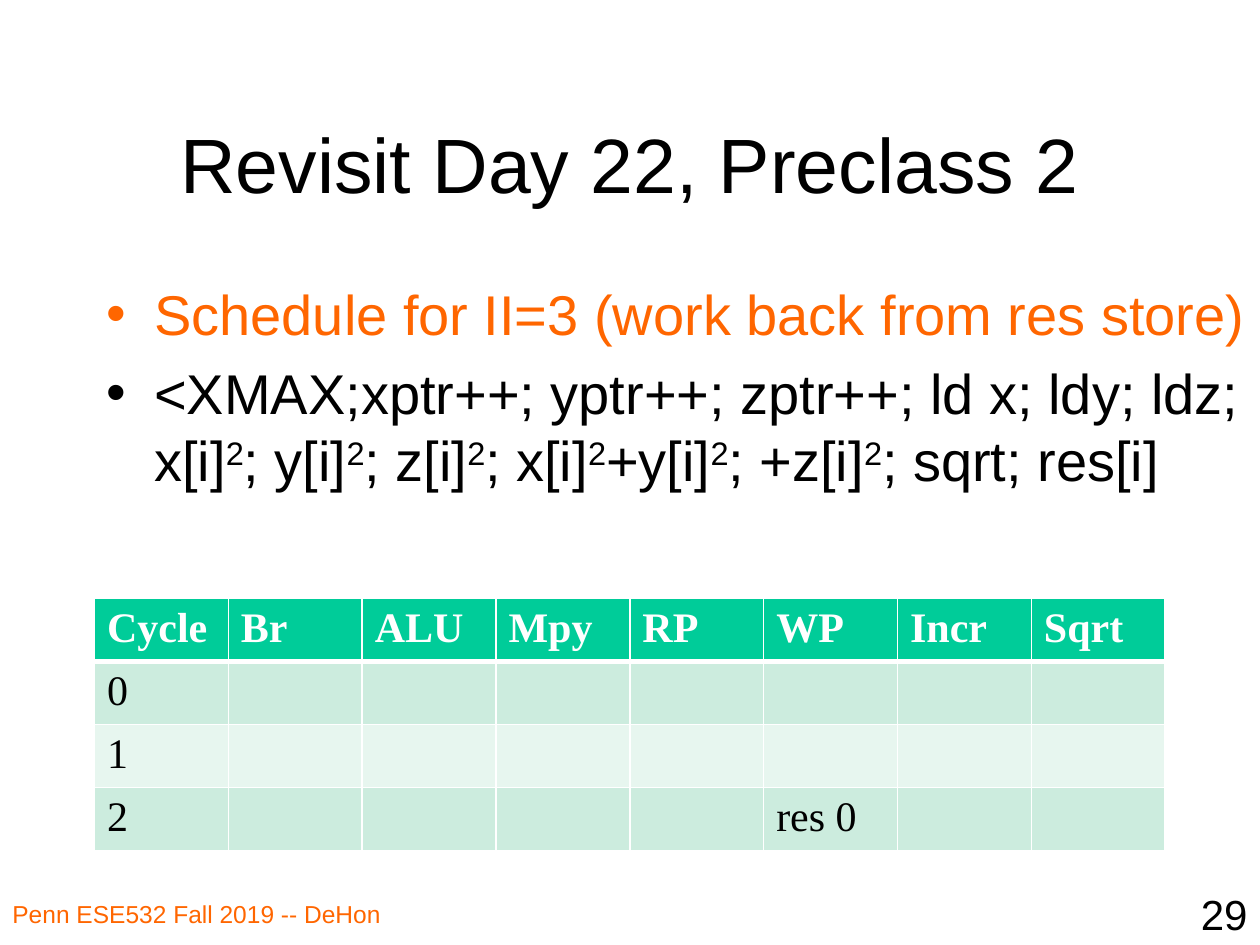
from lxml import etree
from pptx import Presentation
from pptx.dml.color import RGBColor
from pptx.enum.text import MSO_ANCHOR, PP_ALIGN
from pptx.oxml.ns import qn
from pptx.util import Pt

BLACK = RGBColor(0x00, 0x00, 0x00)
WHITE = RGBColor(0xFF, 0xFF, 0xFF)
ORANGE = RGBColor(0xFF, 0x66, 0x00)
GREEN = RGBColor(0x00, 0xCC, 0x99)
MINT = RGBColor(0xCC, 0xEC, 0xDE)
PALE = RGBColor(0xE7, 0xF6, 0xEF)
LEFT, MID, RIGHT = PP_ALIGN.LEFT, PP_ALIGN.CENTER, PP_ALIGN.RIGHT
TOP, CENTER = MSO_ANCHOR.TOP, MSO_ANCHOR.MIDDLE

deck = Presentation()
deck.slide_width, deck.slide_height = Pt(720), Pt(540)
slide = deck.slides.add_slide(deck.slide_layouts[6])


def add_run(para, text, size, color, face="Arial", bold=False):
    run = para.add_run()
    run.text = text
    font = run.font
    font.size, font.name, font.bold = Pt(size), face, bold
    font.color.rgb = color
    return run


def add_box(left, top, width, height, anchor=TOP):
    box = slide.shapes.add_textbox(Pt(left), Pt(top), Pt(width), Pt(height))
    frame = box.text_frame
    frame.word_wrap = True
    frame.vertical_anchor = anchor
    return frame


labels = [
    (54, 48, 612, 90, CENTER, MID, "Revisit Day 22, Preclass 2", 44, BLACK),
    (0, 510, 276, 30, TOP, LEFT, "Penn ESE532 Fall 2019 -- DeHon", 14, ORANGE),
    (570, 504, 150, 36, TOP, RIGHT, "29", 24, BLACK),
]
for left, top, width, height, anchor, align, text, size, color in labels:
    para = add_box(left, top, width, height, anchor).paragraphs[0]
    para.alignment = align
    add_run(para, text, size, color)

points = [
    (ORANGE, ["Schedule for II=3 (work back from res store)"]),
    (BLACK, ["<XMAX;xptr++; yptr++; zptr++; ld x; ldy; ldz; x[i]", "; y[i]",
             "; z[i]", "; x[i]", "+y[i]", "; +z[i]", "; sqrt; res[i]"]),
]
body = add_box(54, 156, 666, 324)
for row, (color, parts) in enumerate(points):
    para = body.add_paragraph() if row else body.paragraphs[0]
    props = para._p.get_or_add_pPr()
    props.set("marL", str(Pt(27)))
    props.set("indent", str(Pt(-27)))
    etree.SubElement(props, qn("a:buFont"), typeface="Arial")
    etree.SubElement(props, qn("a:buChar"), char="•")
    if row:
        para.space_before = Pt(7)
    for col, part in enumerate(parts):
        if col:
            power = add_run(para, "2", 32, color)
            power.font._element.set("baseline", "30000")
        add_run(para, part, 32, color)

rows = [
    ["Cycle", "Br", "ALU", "Mpy", "RP", "WP", "Incr", "Sqrt"],
    ["0"] + [""] * 7,
    ["1"] + [""] * 7,
    ["2", "", "", "", "", "res 0", "", ""],
]
fills = [GREEN, MINT, PALE, MINT]
grid = slide.shapes.add_table(4, 8, Pt(54), Pt(342), Pt(612), Pt(117)).table
for row, texts in enumerate(rows):
    for col, text in enumerate(texts):
        cell = grid.cell(row, col)
        props = cell._tc.get_or_add_tcPr()
        for side in "LRTB":
            thick = (row, side) in [(0, "B"), (1, "T")]
            line = etree.SubElement(props, qn("a:ln" + side), w=str(Pt(3 if thick else 1)))
            fill = etree.SubElement(line, qn("a:solidFill"))
            etree.SubElement(fill, qn("a:srgbClr"), val=str(WHITE))
        cell.fill.solid()
        cell.fill.fore_color.rgb = fills[row]
        if text:
            add_run(cell.text_frame.paragraphs[0], text, 24,
                    BLACK if row else WHITE, "Times New Roman", row == 0)

deck.save("out.pptx")
